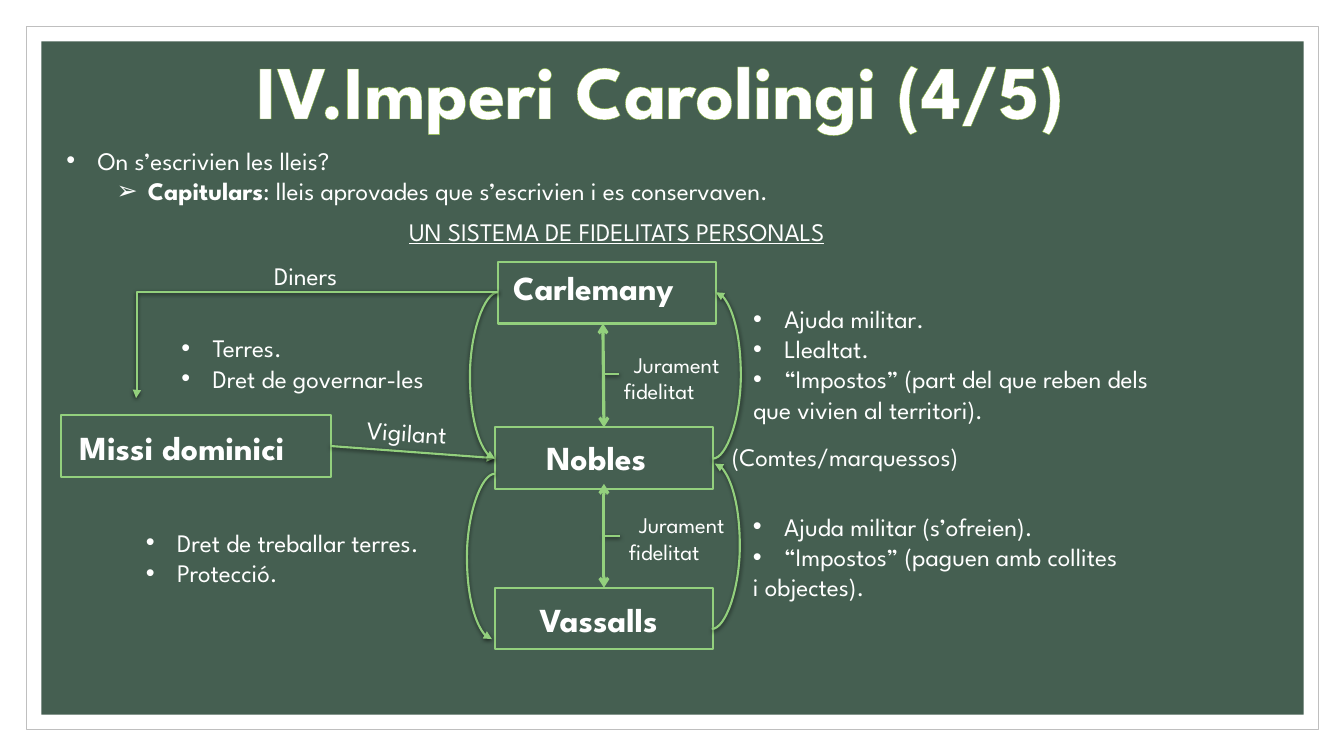
"""Build the slide on personal loyalties in the Carolingian Empire."""
from lxml import etree
from pptx import Presentation, util as u
from pptx.dml.color import RGBColor
from pptx.enum import shapes, text
from pptx.oxml import parse_xml
from pptx.oxml.ns import nsdecls, qn

FONT, WHITE, GREEN = "League Spartan", "FFFFFF", "93D07D"
CURVE, STRAIGHT = shapes.MSO_CONNECTOR.CURVE, shapes.MSO_CONNECTOR.STRAIGHT
ELBOW = shapes.MSO_CONNECTOR.ELBOW
CENTER = text.PP_ALIGN.CENTER


def color(value):
    return RGBColor.from_string(value)


def write(box, lines, size=18, **formats):
    """Fill a box with (text, bullet, indent, alignment) lines; a bar splits off a bold start."""
    frame = box.text_frame
    frame.word_wrap = True
    frame.auto_size = text.MSO_AUTO_SIZE.NONE
    frame.vertical_anchor = text.MSO_ANCHOR.TOP
    for number, (words, bullet, indent, alignment) in enumerate(lines):
        para = frame.paragraphs[0] if number == 0 else frame.add_paragraph()
        para.alignment = alignment
        if bullet:
            props = para._p.get_or_add_pPr()
            props.set("marL", str(u.Inches(indent)))
            props.set("indent", str(-u.Inches(0.31)))
            etree.SubElement(props, qn("a:buFont")).set("typeface", "Arial")
            etree.SubElement(props, qn("a:buChar")).set("char", bullet)
        start, bar, rest = words.partition("|")
        for piece, bold in ((start, bool(bar)), (rest, False)):
            if piece:
                span = para.add_run()
                span.text = piece
                settings = {"name": FONT, "size": u.Pt(size), "bold": bold, **formats}
                for name, value in settings.items():
                    setattr(span.font, name, value)
                span.font.color.rgb = color(WHITE)


deck = Presentation()
deck.slide_width, deck.slide_height = u.Inches(13.33), u.Inches(7.5)
page = deck.slides.add_slide(deck.slide_layouts[5])

rectangles = {}
for name, place, fill, line, width in (
    ("Frame", (0.26, 0.26, 12.82, 6.98), None, "BFBFBF", 0.5),
    ("Board", (0.41, 0.41, 12.52, 6.68), "455F51", None, 0),
    ("Carlemany", (4.94, 2.6, 2.16, 0.61), None, GREEN, 1.5),
    ("Nobles", (4.91, 4.24, 2.16, 0.61), None, GREEN, 1.5),
    ("Vassalls", (4.91, 5.83, 2.16, 0.61), None, GREEN, 1.5),
    ("Missi dominici", (0.61, 4.12, 2.67, 0.61), None, GREEN, 1.5),
):
    shape = page.shapes.add_shape(shapes.MSO_SHAPE.RECTANGLE, *map(u.Inches, place))
    shape.shadow.inherit = False
    if fill:
        shape.fill.solid()
        shape.fill.fore_color.rgb = color(fill)
    else:
        shape.fill.background()
    if line:
        shape.line.color.rgb = color(line)
        shape.line.width = u.Pt(width)
    else:
        shape.line.fill.background()
    rectangles[name] = shape

title = page.shapes.title
page.shapes._spTree.append(title._element)
title.left, title.top, title.width, title.height = map(u.Inches, (2.05, 0.38, 9, 1.01))
write(title, [("IV.Imperi Carolingi (4/5)", None, 0, CENTER)], 54, bold=True)
outline = parse_xml(f'<a:ln {nsdecls("a")} w="6600"><a:solidFill>'
                    '<a:srgbClr val="8AB833"/></a:solidFill></a:ln>')
title.text_frame.paragraphs[0].runs[0].font._element.insert(0, outline)

for words, place, size, formats in (
    ("UN SISTEMA DE FIDELITATS PERSONALS", (3.96, 2.1, 4.74, 0.4), 18, {"underline": True}),
    ("Carlemany", (4.99, 2.6, 2.03, 0.5), 24, {"bold": True}),
    ("Nobles", (5.32, 4.29, 1.33, 0.5), 24, {"bold": True}),
    ("Vassalls", (5.25, 5.89, 1.49, 0.5), 24, {"bold": True}),
    ("Missi dominici", (0.69, 4.19, 2.47, 0.5), 24, {"bold": True}),
    ("(Comtes/marquessos)", (7.16, 4.33, 2.89, 0.4), 18, {}),
    ("Diners", (2.62, 2.53, 0.93, 0.4), 18, {}),
    ("Vigilant", (3.54, 4.09, 1.11, 0.4), 18, {}),
):
    label = page.shapes.add_textbox(*map(u.Inches, place))
    label.rotation = 3.6 if words == "Vigilant" else 0
    write(label, [(words, None, 0, None)], size, **formats)

for left, top in ((6.09, 3.43), (6.14, 5.02)):
    oath = page.shapes.add_textbox(*map(u.Inches, (left, top, 1.3, 0.64)))
    write(oath, [("Jurament ", None, 0, CENTER), ("fidelitat", None, 0, None)], 16)

laws = page.shapes.add_textbox(*map(u.Inches, (0.56, 1.39, 11.54, 0.71)))
write(laws, [
    ("On s’escrivien les lleis?", "•", 0.31, None),
    ("Capitulars|: lleis aprovades que s’escrivien i es conservaven.", "➢", 0.81, None),
])
laws.text_frame.paragraphs[1].level = 1

for place, items, ending in (
    ((7.37, 2.96, 4.89, 1.31),
     ["Ajuda militar.", "Llealtat.", "“Impostos” (part del que reben dels"],
     "que vivien al territori)."),
    ((7.37, 5.02, 4.54, 1.01),
     ["Ajuda militar (s’ofreien).", "“Impostos” (paguen amb collites"], "i objectes)."),
    ((1.7, 3.25, 3.02, 0.71), ["Terres.", "Dret de governar-les"], None),
    ((1.35, 5.18, 3.33, 0.71), ["Dret de treballar terres.", "Protecció."], None),
):
    duties = page.shapes.add_textbox(*map(u.Inches, place))
    lines = [(item, "•", 0.31, None) for item in items]
    write(duties, lines + ([(ending, None, 0, None)] if ending else []))

for kind, points, bend, head, tail, start, end in (
    (STRAIGHT, (5.98, 3.71, 6.14, 3.71), None, None, None, None, None),
    (STRAIGHT, (5.99, 5.32, 6.15, 5.32), None, None, None, None, None),
    (STRAIGHT, (5.98, 3.21, 5.98, 4.24), None, "arrow", "arrow", None, ("Nobles", 0)),
    (STRAIGHT, (5.99, 4.8, 5.99, 5.83), None, "arrow", "arrow", None, ("Vassalls", 0)),
    (STRAIGHT, (3.28, 4.43, 4.91, 4.55), None, None, "triangle",
     ("Missi dominici", 3), ("Nobles", 1)),
    (CURVE, (4.94, 2.9, 4.91, 4.55), 930000, None, "triangle", None, None),
    (CURVE, (4.91, 4.7, 4.88, 6.34), 930000, None, "triangle", None, None),
    (CURVE, (7.07, 4.55, 7.1, 2.9), 930000, None, "triangle", None, None),
    (CURVE, (7.06, 6.24, 7.09, 4.6), 930000, None, "triangle", None, None),
    (ELBOW, (4.94, 2.9, 1.35, 3.95), 99800, None, "triangle", None, None),
):
    link = page.shapes.add_connector(kind, *map(u.Inches, points))
    if start:
        link.begin_connect(rectangles[start[0]], start[1])
    if end:
        link.end_connect(rectangles[end[0]], end[1])
    link.line.color.rgb = color(GREEN)
    link.line.width = u.Pt(2.25 if head else 1.5)
    for tag, arrow in (("a:headEnd", head), ("a:tailEnd", tail)):
        if arrow:
            etree.SubElement(link.line._get_or_add_ln(), qn(tag)).set("type", arrow)
    props = link._element.spPr
    if bend:
        guide = etree.SubElement(props.find(qn("a:prstGeom")).find(qn("a:avLst")), qn("a:gd"))
        guide.set("name", "adj1")
        guide.set("fmla", f"val {bend}")
    effects = etree.SubElement(props, qn("a:effectLst"))
    if not head:
        effects.append(parse_xml(
            f'<a:outerShdw {nsdecls("a")} blurRad="38100" dist="12700" dir="5400000" '
            'rotWithShape="0"><a:srgbClr val="000000"><a:alpha val="63000"/></a:srgbClr>'
            '</a:outerShdw>'))

deck.save("out.pptx")
